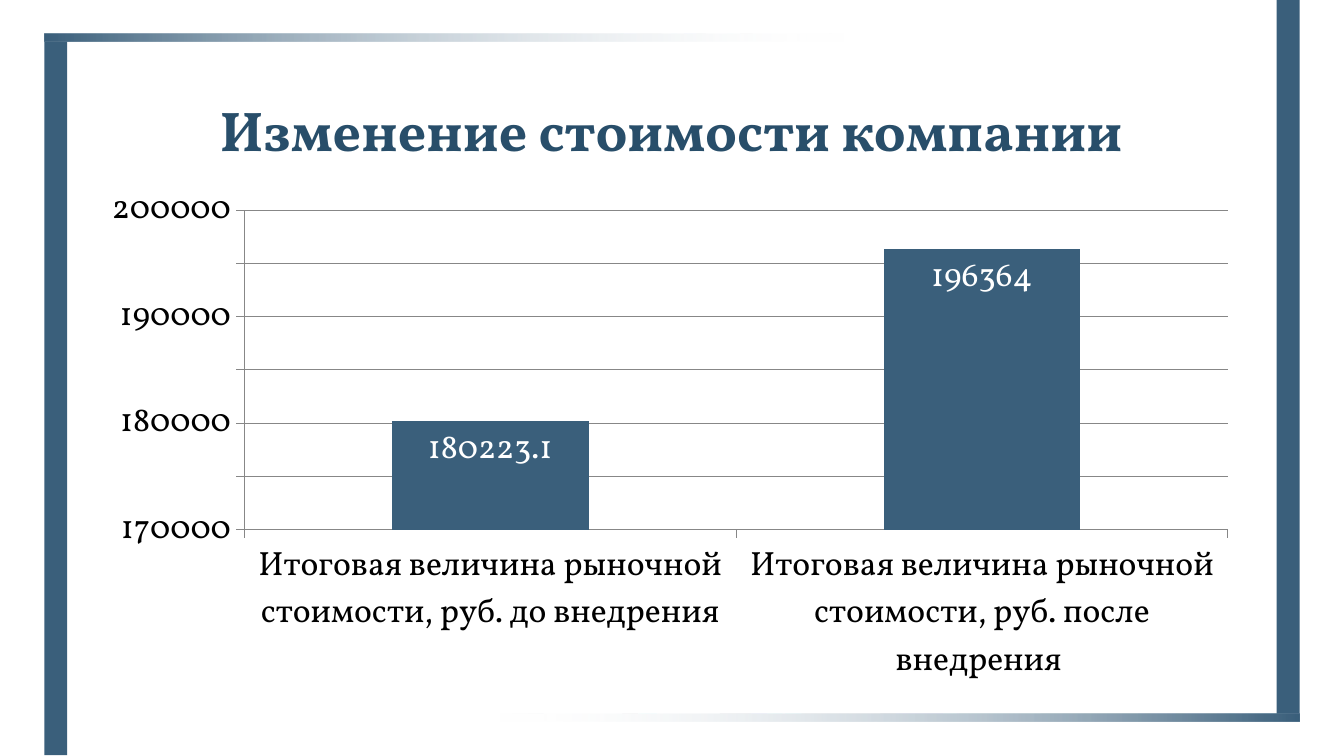
from dataclasses import dataclass

from lxml import etree
from pptx import Presentation
from pptx.chart.data import CategoryChartData
from pptx.dml.color import RGBColor
from pptx.enum.chart import XL_CHART_TYPE, XL_LABEL_POSITION, XL_TICK_MARK
from pptx.enum.shapes import MSO_SHAPE
from pptx.enum.text import MSO_ANCHOR, MSO_AUTO_SIZE, PP_ALIGN
from pptx.oxml.ns import qn
from pptx.util import Inches, Pt

RECT = MSO_SHAPE.RECTANGLE
COLUMN = XL_CHART_TYPE.COLUMN_CLUSTERED
INSIDE = XL_LABEL_POSITION.INSIDE_END
OUTSIDE = XL_TICK_MARK.OUTSIDE
BOTTOM = MSO_ANCHOR.BOTTOM
FIXED = MSO_AUTO_SIZE.NONE
CENTER = PP_ALIGN.CENTER


@dataclass(frozen=True)
class Theme:
    font: str = "Vollkorn"
    head: RGBColor = RGBColor(0x28, 0x4E, 0x6A)
    accent: RGBColor = RGBColor(0x3A, 0x5F, 0x7B)
    white: RGBColor = RGBColor(0xFF, 0xFF, 0xFF)
    black: RGBColor = RGBColor(0, 0, 0)
    grid: RGBColor = RGBColor(0x87, 0x87, 0x87)
    hair: Pt = Pt(0.5)
    head_size: Pt = Pt(30)
    text_size: Pt = Pt(18)


class Deck:
    def __init__(self, theme, slide):
        self.theme = theme
        self.slide = slide

    def style(self, font, size, color, bold=False):
        font.name = self.theme.font
        font.size = size
        font.bold = bold
        font.color.rgb = color

    def rule(self, line):
        line.color.rgb = self.theme.grid
        line.width = self.theme.hair

    def bar(self, left, top, width, height):
        shape = self.slide.shapes.add_shape(
            RECT, Inches(left), Inches(top), Inches(width), Inches(height))
        shape.shadow.inherit = False
        shape.line.fill.background()
        shape.fill.solid()
        shape.fill.fore_color.rgb = self.theme.accent
        return shape

    def fade(self, left, top, width, height, angle):
        """Add a bar that turns clear at 65 % of its length."""
        shape = self.bar(left, top, width, height)
        fill = shape.fill
        fill.gradient()
        fill.gradient_angle = angle
        start, end = fill.gradient_stops
        start.position, start.color.rgb = 0, self.theme.accent
        end.position, end.color.rgb = 0.65, self.theme.white
        last = list(shape.element.spPr.iter(qn("a:srgbClr")))[-1]
        etree.SubElement(last, qn("a:alpha")).set("val", "0")

    def title(self, text, left, top, width, height):
        box = self.slide.shapes.title
        box.left, box.top = Inches(left), Inches(top)
        box.width, box.height = Inches(width), Inches(height)
        frame = box.text_frame
        frame.text = text
        frame.word_wrap = True
        frame.auto_size = FIXED
        frame.vertical_anchor = BOTTOM
        line = frame.paragraphs[0]
        line.alignment = CENTER
        self.style(line.runs[0].font, self.theme.head_size, self.theme.head, True)

    def chart(self, data, left, top, width, height):
        theme = self.theme
        chart = self.slide.shapes.add_chart(
            COLUMN, Inches(left), Inches(top), Inches(width), Inches(height),
            data).chart
        chart.has_legend = False
        chart.has_title = False
        self.style(chart.font, theme.text_size, theme.black)

        scale = chart.value_axis
        scale.minimum_scale, scale.maximum_scale = 170000, 200000
        scale.major_unit = 5000
        scale.has_major_gridlines = True
        self.rule(scale.major_gridlines.format.line)
        for axis in (scale, chart.category_axis):
            axis.major_tick_mark = OUTSIDE
            self.rule(axis.format.line)

        plot = chart.plots[0]
        plot.gap_width = 150
        plot.vary_by_categories = False
        fill = plot.series[0].format.fill
        fill.solid()
        fill.fore_color.rgb = theme.accent
        plot.has_data_labels = True
        labels = plot.data_labels
        labels.show_value = True
        labels.position = INSIDE
        self.style(labels.font, theme.text_size, theme.white)


def main():
    prs = Presentation()
    prs.slide_width = Inches(10)
    prs.slide_height = prs.slide_width * 9 // 16
    deck = Deck(Theme(), prs.slides.add_slide(prs.slide_layouts[5]))

    deck.fade(0.5, 5.31, 9.17, 0.06, 180)
    deck.fade(0.33, 0.25, 9.17, 0.06, 0)
    deck.bar(9.5, 0, 0.17, 5.31)
    deck.bar(0.33, 0.31, 0.17, 5.31)

    deck.title("Изменение стоимости компании", 0.58, 0.38, 8.83, 0.88)

    data = CategoryChartData()
    data.categories = [
        f"Итоговая величина рыночной стоимости, руб. {stage}"
        for stage in ("до внедрения", "после внедрения ")]
    data.add_series("Series 1", (180223.1, 196364))
    deck.chart(data, 0.66, 1.31, 8.65, 3.87)

    prs.save("out.pptx")


if __name__ == "__main__":
    main()
